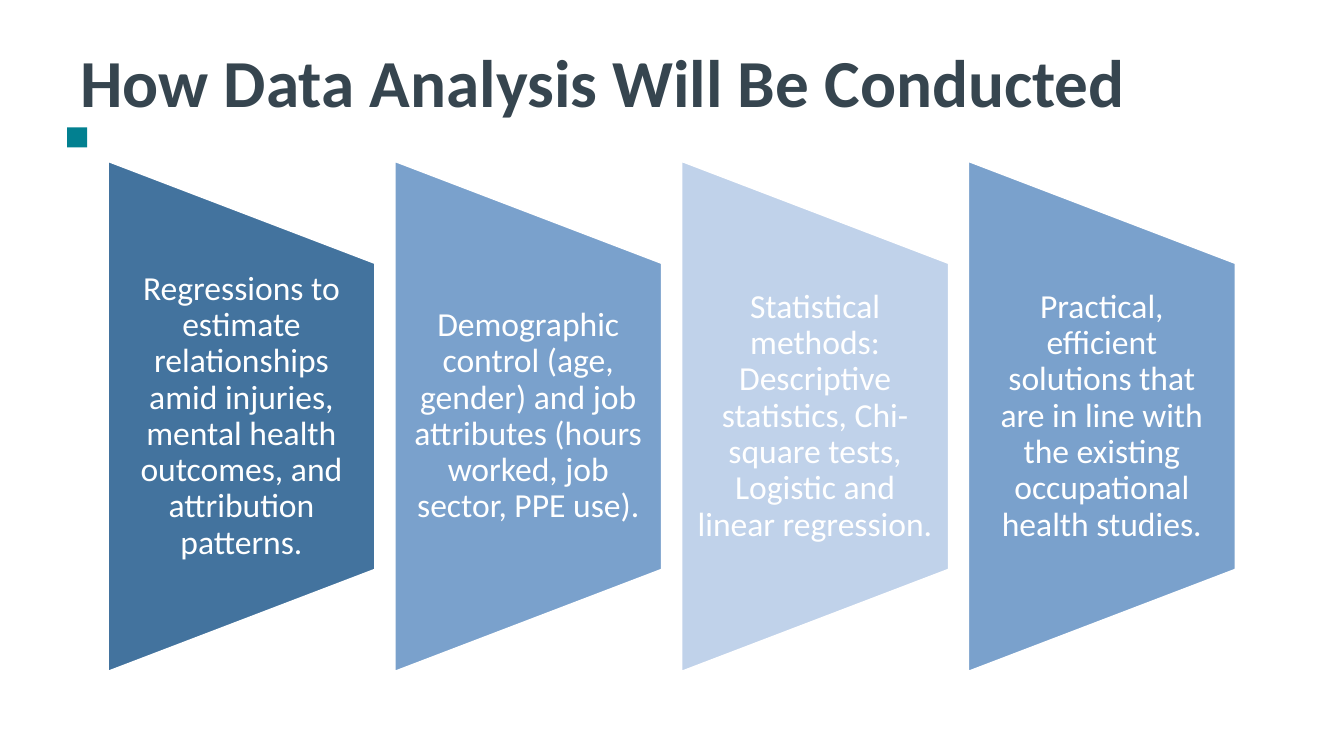
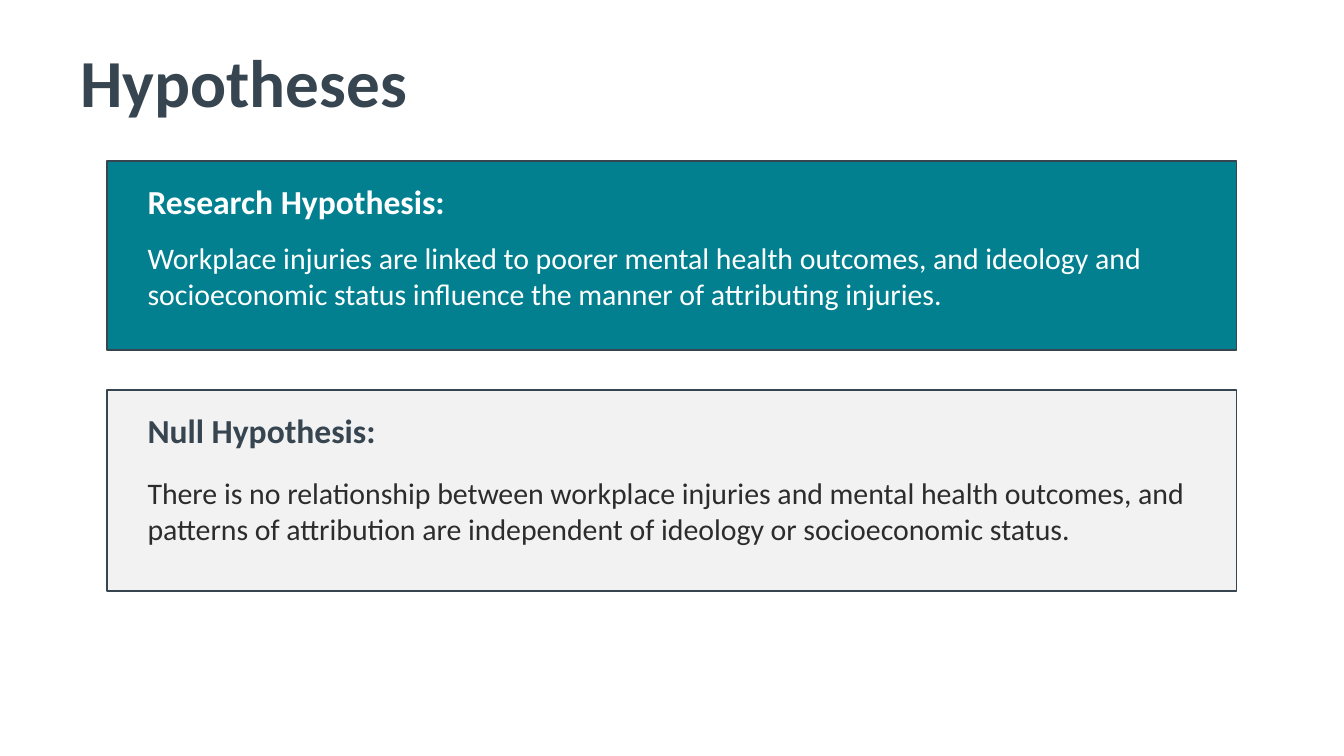
from dataclasses import dataclass

import pptx
import pptx.dml.color
import pptx.enum.shapes
import pptx.enum.text
import pptx.util

Cm = pptx.util.Cm
Pt = pptx.util.Pt
SHAPE = pptx.enum.shapes.MSO_SHAPE
ALIGN = pptx.enum.text.PP_ALIGN


@dataclass(frozen=True)
class Theme:
    font: str = "Calibri"
    slate: str = "36454F"
    teal: str = "028090"
    ink: str = "2C2C2C"
    pale: str = "F2F2F2"
    white: str = "FFFFFF"
    blue_dark: str = "43739E"
    blue_mid: str = "7AA1CC"
    blue_light: str = "C0D2EA"
    title_size: int = 36
    heading_size: int = 18
    body_size: int = 16


def rgb(value):
    return pptx.dml.color.RGBColor.from_string(value)


class Deck:
    def __init__(self, theme):
        self.theme = theme
        self.prs = pptx.Presentation()
        self.prs.slide_width = Cm(25.4)
        self.prs.slide_height = Cm(14.29)
        self.s = None

    def slide(self, title):
        t = self.theme
        self.s = self.prs.slides.add_slide(self.prs.slide_layouts[6])
        self.text(title, 1.27, 0.76, 22.86, 1.52, t.title_size, t.slate, bold=True)

    def shape(self, kind, x, y, w, h, fill, line=None):
        sp = self.s.shapes.add_shape(kind, Cm(x), Cm(y), Cm(w), Cm(h))
        sp.shadow.inherit = False
        sp.fill.solid()
        sp.fill.fore_color.rgb = rgb(fill)
        if line:
            sp.line.color.rgb = rgb(line)
            sp.line.width = Pt(1)
        else:
            sp.line.fill.background()
        return sp

    def text(self, words, x, y, w, h, size, color, bold=False, align=ALIGN.LEFT):
        sp = self.s.shapes.add_textbox(Cm(x), Cm(y), Cm(w), Cm(h))
        tf = sp.text_frame
        tf.word_wrap = True
        tf.vertical_anchor = pptx.enum.text.MSO_ANCHOR.MIDDLE
        p = tf.paragraphs[0]
        p.alignment = align
        r = p.add_run()
        r.text = words
        r.font.name = self.theme.font
        r.font.size = Pt(size)
        r.font.bold = bold
        r.font.color.rgb = rgb(color)
        return sp

    def panel(self, words, x, fill):
        """Draw a trapezoid that narrows to the right, with centred text."""
        t = self.theme
        length, width, middle = 9.65, 5.05, 7.87
        # The shape is laid out flat, then turned about its centre.
        sp = self.shape(SHAPE.FLOWCHART_MANUAL_OPERATION, x + (width - length) / 2,
                        middle - width / 2, length, width, fill, t.white)
        sp.rotation = 270
        height = 5.79
        box = self.text(words, x, middle - height / 2, width, height,
                        t.heading_size, t.white, align=ALIGN.CENTER)
        tf = box.text_frame
        tf.margin_left = tf.margin_right = Cm(0.3)
        tf.margin_top = tf.margin_bottom = 0
        tf.paragraphs[0].line_spacing = 0.9

    def card(self, heading, body, y, h, fill, heading_color, body_color):
        t = self.theme
        self.shape(SHAPE.RECTANGLE, 2.03, y, 21.34, h, fill, t.slate)
        self.text(heading, 2.54, y + 0.38, 20.32, 0.76, t.heading_size,
                  heading_color, bold=True)
        self.text(body, 2.54, y + 1.27, 20.32, h - 1.78, t.body_size, body_color)


def analysis_slide(deck):
    t = deck.theme
    deck.slide("How Data Analysis Will Be Conducted")
    deck.shape(SHAPE.RECTANGLE, 1.27, 2.41, 0.38, 0.38, t.teal)
    panels = [
        ("Regressions to estimate relationships amid injuries, mental health "
         "outcomes, and attribution patterns.", t.blue_dark),
        ("Demographic control (age, gender) and job attributes (hours worked, "
         "job sector, PPE use).", t.blue_mid),
        ("Statistical methods: Descriptive statistics, Chi-square tests, "
         "Logistic and linear regression.", t.blue_light),
        ("Practical, efficient solutions that are in line with the existing "
         "occupational health studies.", t.blue_mid),
    ]
    for i, (words, fill) in enumerate(panels):
        deck.panel(words, 2.04 + i * 5.42, fill)


def hypotheses_slide(deck):
    t = deck.theme
    deck.slide("Hypotheses")
    deck.card("Research Hypothesis:",
              "Workplace injuries are linked to poorer mental health outcomes, and "
              "ideology and socioeconomic status influence the manner of "
              "attributing injuries.",
              3.05, 3.56, t.teal, t.white, t.white)
    deck.card("Null Hypothesis:",
              "There is no relationship between workplace injuries and mental "
              "health outcomes, and patterns of attribution are independent of "
              "ideology or socioeconomic status.",
              7.37, 3.81, t.pale, t.slate, t.ink)


def main():
    deck = Deck(Theme())
    analysis_slide(deck)
    hypotheses_slide(deck)
    deck.prs.save("out.pptx")


if __name__ == "__main__":
    main()
